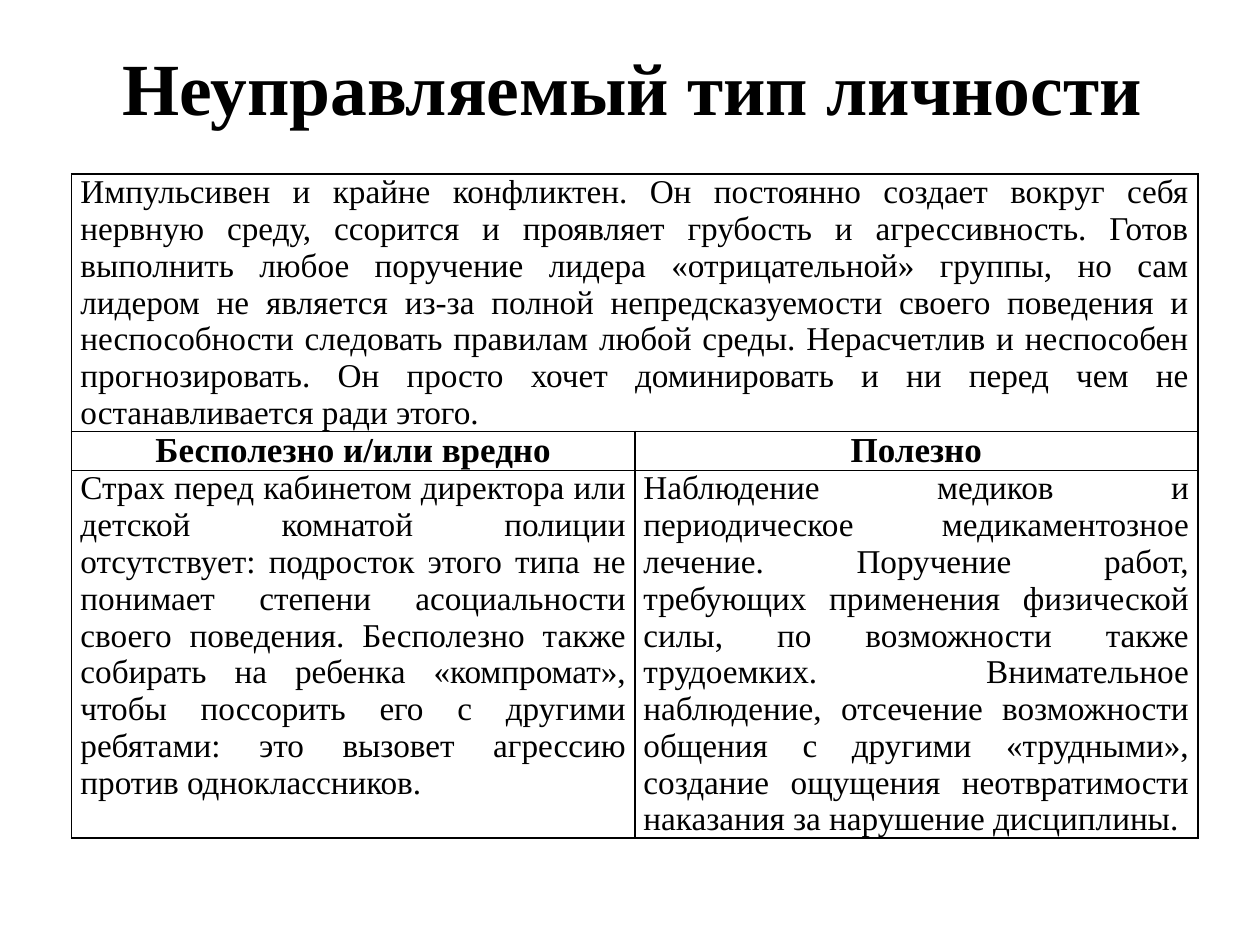
"""Build a slide with a title and a table on one personality type."""
import pptx
import pptx.dml.color
import pptx.enum.text
import pptx.oxml.ns
import pptx.util
from lxml import etree

Pt = pptx.util.Pt
ALIGN = pptx.enum.text.PP_ALIGN
MIDDLE = pptx.enum.text.MSO_ANCHOR.MIDDLE

HUES = {"ink": "000000", "page": "FFFFFF"}
TITLE = "Неуправляемый тип личности"
ROWS = [
    ["Импульсивен и крайне конфликтен. Он постоянно создает вокруг себя "
     "нервную среду, ссорится и проявляет грубость и агрессивность. Готов "
     "выполнить любое поручение лидера «отрицательной» группы, но сам лидером "
     "не является из-за полной непредсказуемости своего поведения и "
     "неспособности следовать правилам любой среды. Нерасчетлив и неспособен "
     "прогнозировать. Он просто хочет доминировать и ни перед чем не "
     "останавливается ради этого.", ""],
    ["Бесполезно и/или вредно", "Полезно"],
    ["Страх перед кабинетом директора или детской комнатой полиции "
     "отсутствует: подросток этого типа не понимает степени асоциальности "
     "своего поведения. Бесполезно также собирать на ребенка «компромат», "
     "чтобы поссорить его с другими ребятами: это вызовет агрессию против "
     "одноклассников.",
     "Наблюдение медиков и периодическое медикаментозное лечение. Поручение "
     "работ, требующих применения физической силы, по возможности также "
     "трудоемких. Внимательное наблюдение, отсечение возможности общения с "
     "другими «трудными», создание ощущения неотвратимости наказания за "
     "нарушение дисциплины."],
]
TALL = [147, 22, 210]
BOX = {"left": 51, "top": 0, "width": 620.5, "height": 104.5}
GRID = {"left": 41, "top": 99.5, "width": 643.5, "height": sum(TALL)}
PADS = {"margin_left": 5, "margin_right": 5, "margin_top": 0, "margin_bottom": 0}
BODY = {"size": Pt(19), "bold": False}
HEAD = {"size": Pt(20), "bold": True}
MAIN = {"size": Pt(42), "bold": True}


def color(name):
    return pptx.dml.color.RGBColor.from_string(HUES[name])


def apply(item, look):
    for key, value in look.items():
        setattr(item, key, value)


def write(frame, text, look, align):
    frame.text = text
    para = frame.paragraphs[0]
    para.alignment = align
    font = para.runs[0].font if para.runs else para.font
    apply(font, {"name": "Times New Roman", **look})
    font.color.rgb = color("ink")
    return para


def edge(cell):
    props = cell._tc.get_or_add_tcPr()
    qn = pptx.oxml.ns.qn
    for side in "LRTB":
        line = etree.SubElement(props, qn(f"a:ln{side}"), w=str(Pt(1)))
        fill = etree.SubElement(line, qn("a:solidFill"))
        etree.SubElement(fill, qn("a:srgbClr"), val=HUES["ink"])


def main():
    deck = pptx.Presentation()
    apply(deck, {"slide_width": Pt(720), "slide_height": Pt(540)})
    slide = deck.slides.add_slide(deck.slide_layouts[5])

    title = slide.shapes.title
    apply(title, {key: Pt(value) for key, value in BOX.items()})
    apply(title.text_frame, {"vertical_anchor": MIDDLE, "word_wrap": True})
    write(title.text_frame, TITLE, MAIN, ALIGN.CENTER).line_spacing = 0.9

    place = {key: Pt(value) for key, value in GRID.items()}
    table = slide.shapes.add_table(len(ROWS), 2, **place).table
    apply(table, {"first_row": False, "horz_banding": False})
    for r, texts in enumerate(ROWS):
        table.rows[r].height = Pt(TALL[r])
        look, align = (HEAD, ALIGN.CENTER) if r == 1 else (BODY, ALIGN.JUSTIFY)
        for c, text in enumerate(texts):
            cell = table.cell(r, c)
            apply(cell, {key: Pt(value) for key, value in PADS.items()})
            write(cell.text_frame, text, look, align)
            edge(cell)
            cell.fill.solid()
            cell.fill.fore_color.rgb = color("page")
    table.cell(0, 0).merge(table.cell(0, 1))
    deck.save("out.pptx")


if __name__ == "__main__":
    main()
